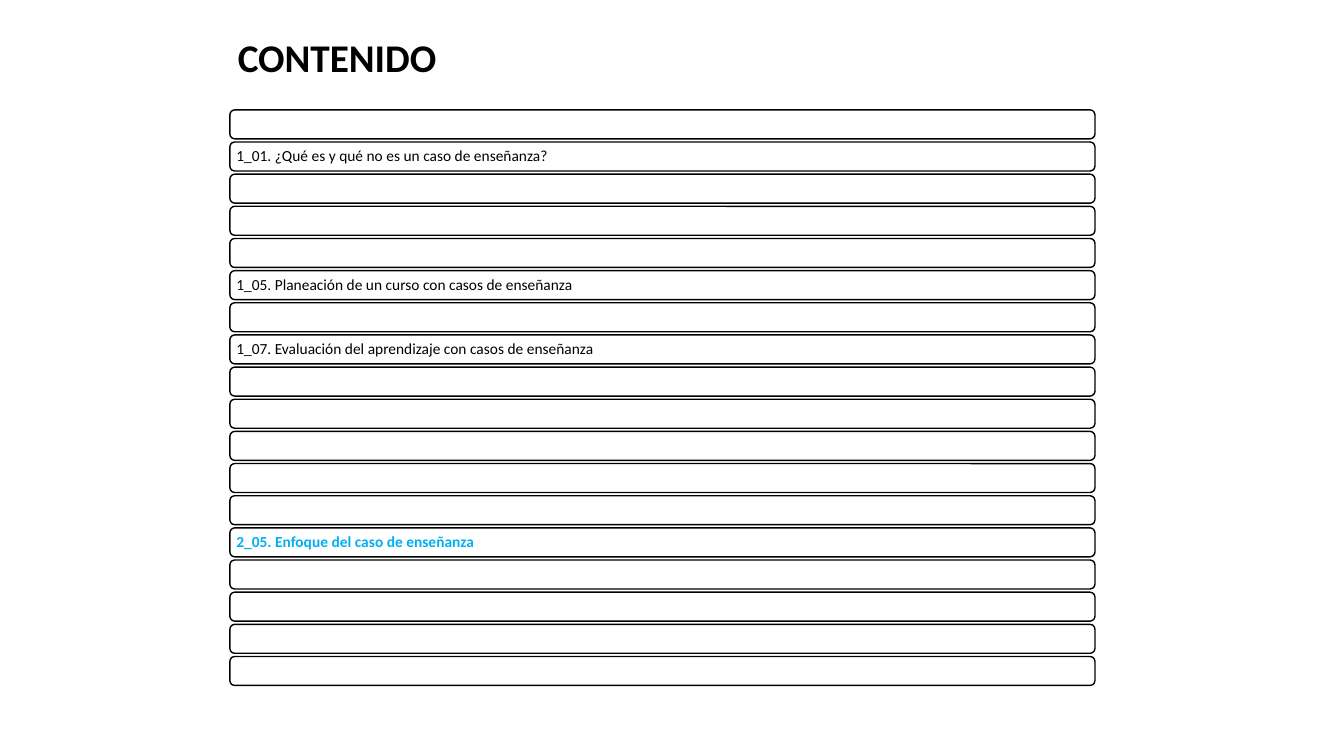
from pptx import Presentation
from pptx import util as u
from pptx.dml.color import RGBColor
from pptx.enum import shapes, text

BLACK, WHITE, ACCENT = "000000", "FFFFFF", "00B0F0"
ROWS = 18
TOPICS = {  # row index: (wording, is the current topic)
    1: ("1_01. ¿Qué es y qué no es un caso de enseñanza?", False),
    5: ("1_05. Planeación de un curso con casos de enseñanza", False),
    7: ("1_07. Evaluación del aprendizaje con casos de enseñanza", False),
    13: ("2_05. Enfoque del caso de enseñanza", True),
}


def color(value):
    return RGBColor.from_string(value)


def write(p, words, size, hue, bold):
    p.text = words
    p.alignment = text.PP_ALIGN.LEFT
    p.font.name, p.font.size, p.font.bold = "Calibri", u.Pt(size), bold
    p.font.color.rgb = color(hue)


def add_title(s, left, top, width, height):
    tf = s.shapes.add_textbox(*map(u.Inches, (left, top, width, height))).text_frame
    tf.word_wrap = False
    tf.auto_size = text.MSO_AUTO_SIZE.SHAPE_TO_FIT_TEXT
    write(tf.paragraphs[0], "CONTENIDO", 28, BLACK, True)


def add_topic_list(s, left, top, width, height):
    """Stack equal rounded bars, with one tenth of each row left as gap."""
    pitch = height / (ROWS - 0.1)
    for row in range(ROWS):
        bar = (left, top + row * pitch, width, 0.9 * pitch)
        sp = s.shapes.add_shape(shapes.MSO_SHAPE.ROUNDED_RECTANGLE, *map(u.Inches, bar))
        sp.shadow.inherit = False
        sp.fill.solid()
        sp.fill.fore_color.rgb = color(WHITE)
        sp.line.color.rgb = color(BLACK)
        sp.line.width = u.Pt(1)
        if row in TOPICS:
            words, current = TOPICS[row]
            tf = sp.text_frame
            tf.word_wrap = True
            tf.vertical_anchor = text.MSO_ANCHOR.MIDDLE
            tf.margin_left = tf.margin_right = tf.margin_top = tf.margin_bottom = u.Inches(0.05)
            p = tf.paragraphs[0]
            p.line_spacing = 0.9
            write(p, words, 11, ACCENT if current else BLACK, current)


def main():
    prs = Presentation()
    prs.slide_width, prs.slide_height = u.Inches(13.33), u.Inches(7.5)
    s = prs.slides.add_slide(prs.slide_layouts[6])
    add_topic_list(s, 2.28, 1.09, 8.58, 5.71)
    add_title(s, 2.26, 0.28, 2.19, 0.57)
    prs.save("out.pptx")


if __name__ == "__main__":
    main()
